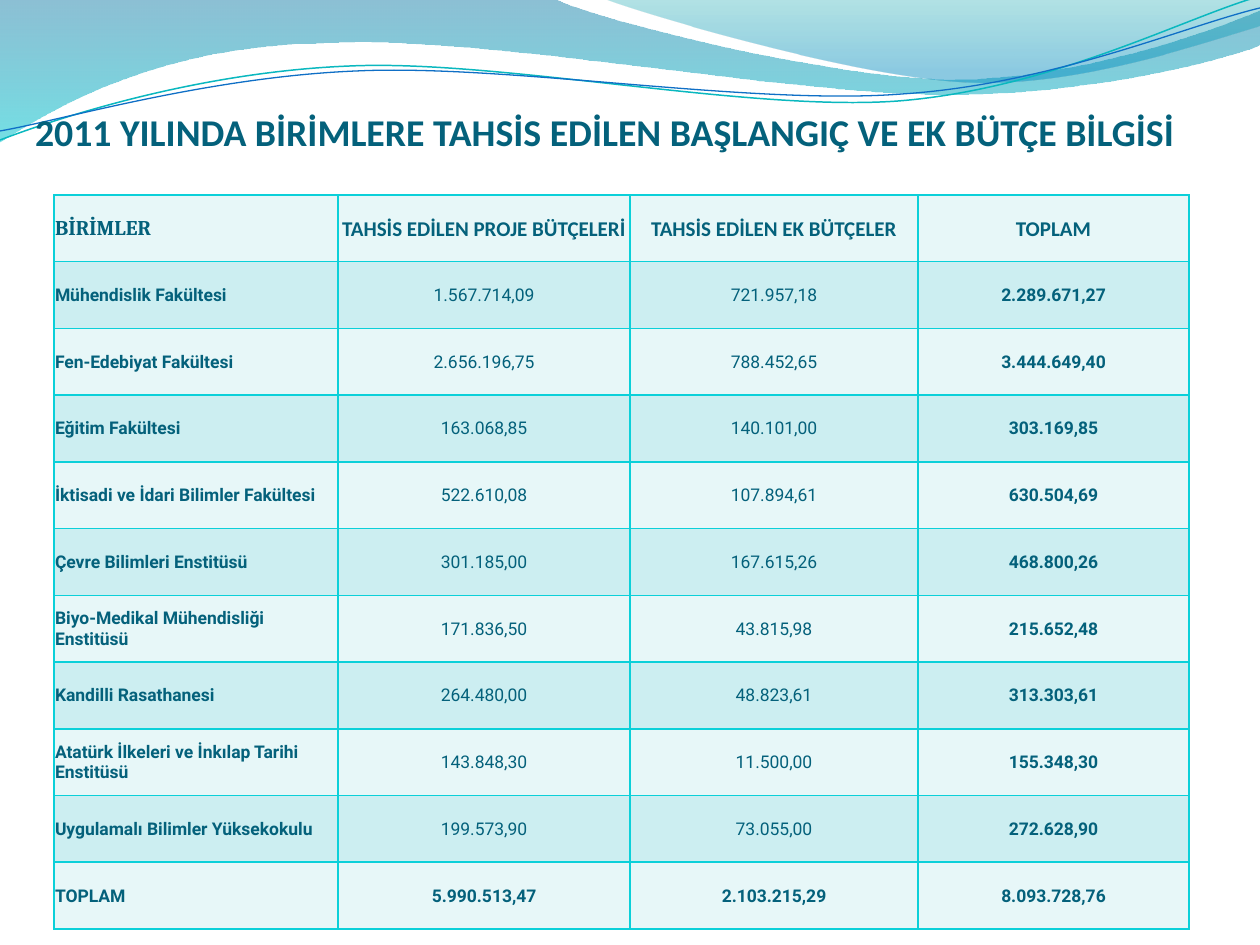
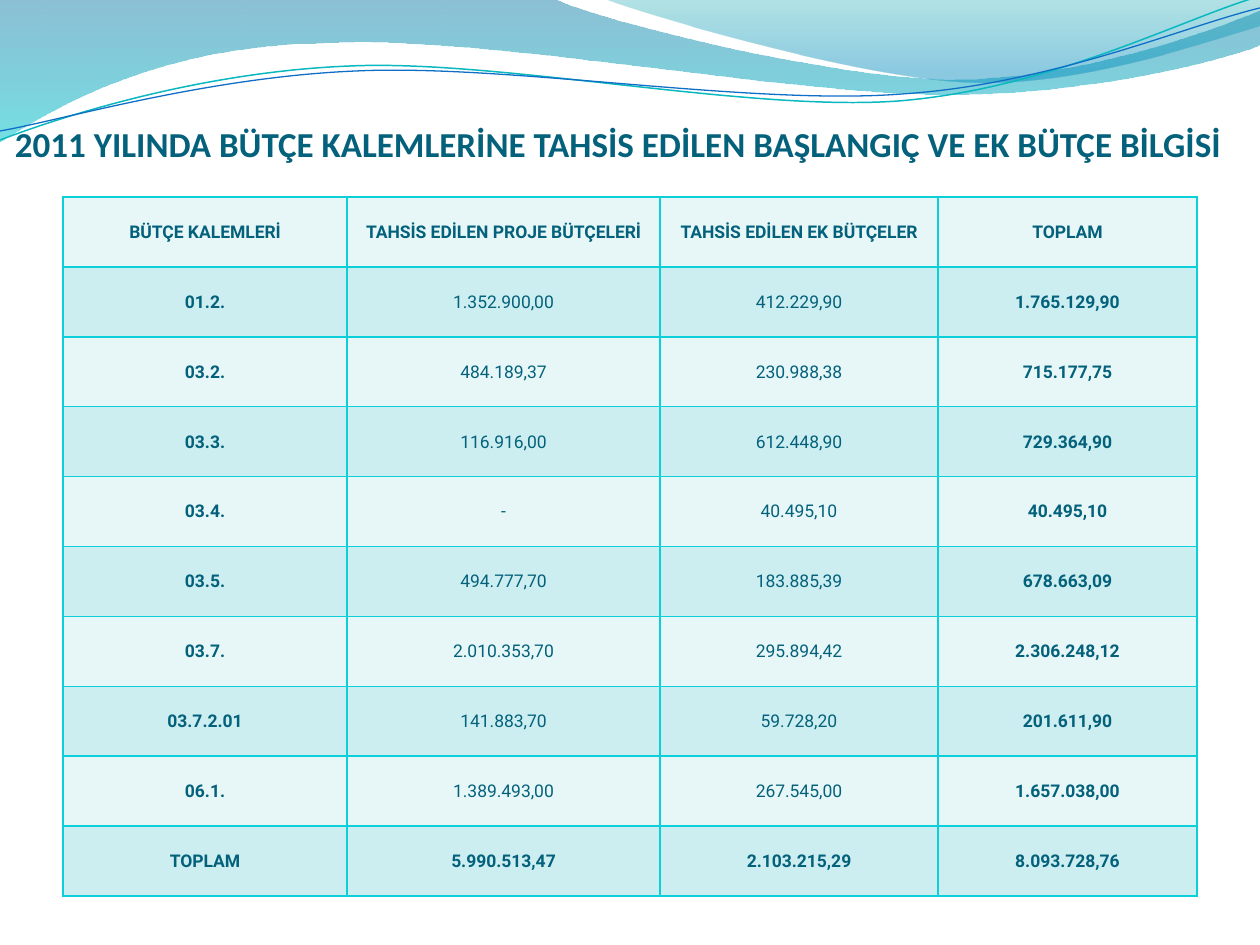
"""Build two slides with the 2011 budget tables over a shared wave band."""
from lxml.etree import SubElement
from pptx import Presentation
from pptx.dml.color import RGBColor
from pptx.enum.text import MSO_ANCHOR, MSO_AUTO_SIZE, PP_ALIGN
from pptx.oxml.ns import qn
from pptx.util import Pt

SCALE = 914400 / 126
COLORS = {
    "text": "04617B", "border": "0BD0D9", "light row": "E7F7F8", "dark row": "CCEEF1",
    "deep blue": "0074A1", "aqua": "00C6CF", "teal": "00A1A9", "sky": "008BBF",
    "teal line": "0AB8BF", "blue line": "0F6FC6",
}

WAVES = [
    {"start": (0, 0),
     "parts": [(554, -1), (600, 21, 837, 79, 955, 79), (1075, 79, 1207, 33, 1260, 11),
               (1261, 45), (1239, 55, 1096, 96, 940, 94), (783, 94, 481, 35, 324, 43),
               (163, 45, 58, 105, -1, 142), (0, 0)],
     "stops": [("deep blue", 0, 45), ("aqua", 1, 55)]},
    {"start": (604, -1),
     "parts": [(641, 14, 859, 78, 969, 82), (1079, 87, 1211, 40, 1260, 26), (1260, 0),
               (604, -1)],
     "stops": [("teal", 0, 30), ("sky", 0.8, 45)]},
    {"start": (0, 140),
     "parts": [(60, 117, 199, 72, 349, 66), (498, 59, 747, 112, 898, 101),
               (1050, 89, 1182, 19, 1257, -3)],
     "line": ("teal line", 0.85)},
    {"start": (0, 131),
     "parts": [(59, 121, 207, 77, 357, 71), (508, 64, 752, 106, 903, 94),
               (1053, 84, 1185, 26, 1260, 8)],
     "line": ("blue line", 0.75)},
]

TOTALS = ("TOPLAM", "5.990.513,47", "2.103.215,29", "8.093.728,76")
VALUE_HEADERS = ("TAHSİS EDİLEN PROJE BÜTÇELERİ", "TAHSİS EDİLEN EK BÜTÇELER", "TOPLAM")
SLIDES = [
    {"title": "2011 YILINDA BİRİMLERE TAHSİS EDİLEN BAŞLANGIÇ VE EK BÜTÇE BİLGİSİ",
     "title box": (35, 85, 1181, 69), "title size": 21.6,
     "table box": (54, 195, 1135, 734), "columns": (284, 292, 288, 271),
     "label alignment": PP_ALIGN.LEFT, "header size": 12,
     "header fonts": ("Cambria", "Calibri", "Calibri", "Calibri"),
     "rows": [
         ("BİRİMLER", *VALUE_HEADERS),
         ("Mühendislik Fakültesi", "1.567.714,09", "721.957,18", "2.289.671,27"),
         ("Fen-Edebiyat Fakültesi", "2.656.196,75", "788.452,65", "3.444.649,40"),
         ("Eğitim Fakültesi", "163.068,85", "140.101,00", "303.169,85"),
         ("İktisadi ve İdari Bilimler Fakültesi", "522.610,08", "107.894,61", "630.504,69"),
         ("Çevre Bilimleri Enstitüsü", "301.185,00", "167.615,26", "468.800,26"),
         ("Biyo-Medikal Mühendisliği Enstitüsü", "171.836,50", "43.815,98", "215.652,48"),
         ("Kandilli Rasathanesi", "264.480,00", "48.823,61", "313.303,61"),
         ("Atatürk İlkeleri ve İnkılap Tarihi Enstitüsü", "143.848,30", "11.500,00",
          "155.348,30"),
         ("Uygulamalı Bilimler Yüksekokulu", "199.573,90", "73.055,00", "272.628,90"),
         TOTALS]},
    {"title": "2011 YILINDA BÜTÇE KALEMLERİNE TAHSİS EDİLEN BAŞLANGIÇ VE EK BÜTÇE BİLGİSİ",
     "title box": (15, 96, 1221, 69), "title size": 20,
     "table box": (63, 197, 1134, 699), "columns": (284, 313, 278, 259),
     "label alignment": PP_ALIGN.CENTER, "header size": 10,
     "header fonts": ("Roboto",) * 4,
     "rows": [
         ("BÜTÇE KALEMLERİ", *VALUE_HEADERS),
         ("01.2.", "1.352.900,00", "412.229,90", "1.765.129,90"),
         ("03.2.", "484.189,37", "230.988,38", "715.177,75"),
         ("03.3.", "116.916,00", "612.448,90", "729.364,90"),
         ("03.4.", "-", "40.495,10", "40.495,10"),
         ("03.5.", "494.777,70", "183.885,39", "678.663,09"),
         ("03.7.", "2.010.353,70", "295.894,42", "2.306.248,12"),
         ("03.7.2.01", "141.883,70", "59.728,20", "201.611,90"),
         ("06.1.", "1.389.493,00", "267.545,00", "1.657.038,00"),
         TOTALS]},
]


def px(length):
    return round(length * SCALE)


def write(paragraph, text, alignment, font_name, size, bold):
    paragraph.alignment = alignment
    run = paragraph.add_run()
    run.text = text
    for name, value in {"name": font_name, "size": Pt(size), "bold": bold}.items():
        setattr(run.font, name, value)
    run.font.color.rgb = RGBColor.from_string(COLORS["text"])


presentation = Presentation()
presentation.slide_width = px(1260)
presentation.slide_height = px(945)
layout = presentation.slide_layouts[5]
slides = [presentation.slides.add_slide(layout) for content in SLIDES]

for number, wave in enumerate(WAVES):
    points = [(px(part[index]), px(part[index + 1]))
              for part in wave["parts"] for index in range(0, len(part), 2)]
    builder = slides[0].shapes.build_freeform(*map(px, wave["start"]))
    builder.add_line_segments(points, close="stops" in wave)
    shape = builder.convert_to_shape()
    segments = iter(list(shape.element.iter(qn("a:lnTo"))))
    for part in wave["parts"]:
        curve = next(segments)
        if len(part) == 6:
            curve.tag = qn("a:cubicBezTo")
            for control in (next(segments), next(segments)):
                curve.append(control[0])
                control.getparent().remove(control)
    shape.shadow.inherit = False
    if "stops" in wave:
        shape.line.fill.background()
        shape.fill.gradient()
        shape.fill.gradient_angle = 270
        for stop, (color, position, opacity) in zip(shape.fill.gradient_stops, wave["stops"]):
            stop.position = position
            stop.color.rgb = RGBColor.from_string(COLORS[color])
        for element, (color, position, opacity) in zip(
                shape.element.spPr.iter(qn("a:srgbClr")), wave["stops"]):
            SubElement(element, qn("a:alpha"), val=str(opacity * 1000))
    else:
        color, width = wave["line"]
        shape.fill.background()
        shape.line.color.rgb = RGBColor.from_string(COLORS[color])
        shape.line.width = Pt(width)
    shape.element.nvSpPr.cNvPr.set("id", str(100 + number))
    presentation.slide_master.shapes.element.append(shape.element)

for slide, content in zip(slides, SLIDES):
    title = slide.shapes.title
    for name, length in zip(("left", "top", "width", "height"), content["title box"]):
        setattr(title, name, px(length))
    frame_format = {
        "margin_left": 0, "margin_top": px(6), "margin_right": 0, "margin_bottom": 0,
        "vertical_anchor": MSO_ANCHOR.BOTTOM, "word_wrap": True,
        "auto_size": MSO_AUTO_SIZE.NONE}
    for name, value in frame_format.items():
        setattr(title.text_frame, name, value)
    write(title.text_frame.paragraphs[0], content["title"], PP_ALIGN.LEFT,
          "Calibri", content["title size"], True)

    rows = content["rows"]
    last_row, last_column = len(rows) - 1, len(content["columns"]) - 1
    table_frame = slide.shapes.add_table(len(rows), len(content["columns"]),
                                         *map(px, content["table box"]))
    table = table_frame.table
    for column, width in zip(table.columns, content["columns"]):
        column.width = px(width)
    for row_index, values in enumerate(rows):
        table.rows[row_index].height = px(content["table box"][3] / len(rows))
        for column_index, value in enumerate(values):
            cell = table.cell(row_index, column_index)
            cell_format = {
                "margin_left": px(1), "margin_top": px(1), "margin_right": px(1),
                "margin_bottom": 0, "vertical_anchor": MSO_ANCHOR.MIDDLE}
            for name, setting in cell_format.items():
                setattr(cell, name, setting)
            cell.fill.solid()
            cell.fill.fore_color.rgb = RGBColor.from_string(
                COLORS["dark row" if row_index % 2 else "light row"])
            header = row_index == 0
            write(cell.text_frame.paragraphs[0], value,
                  PP_ALIGN.CENTER if column_index else content["label alignment"],
                  content["header fonts"][column_index] if header else "Roboto",
                  content["header size"] if header else 10,
                  row_index in (0, last_row) or column_index in (0, last_column))
    for cell_properties in table_frame.element.iter(qn("a:tcPr")):
        for position, side in enumerate(("a:lnL", "a:lnR", "a:lnT", "a:lnB")):
            border = SubElement(cell_properties, qn(side), w=str(Pt(1)))
            SubElement(SubElement(border, qn("a:solidFill")), qn("a:srgbClr"),
                       val=COLORS["border"])
            cell_properties.insert(position, border)

presentation.save("out.pptx")
